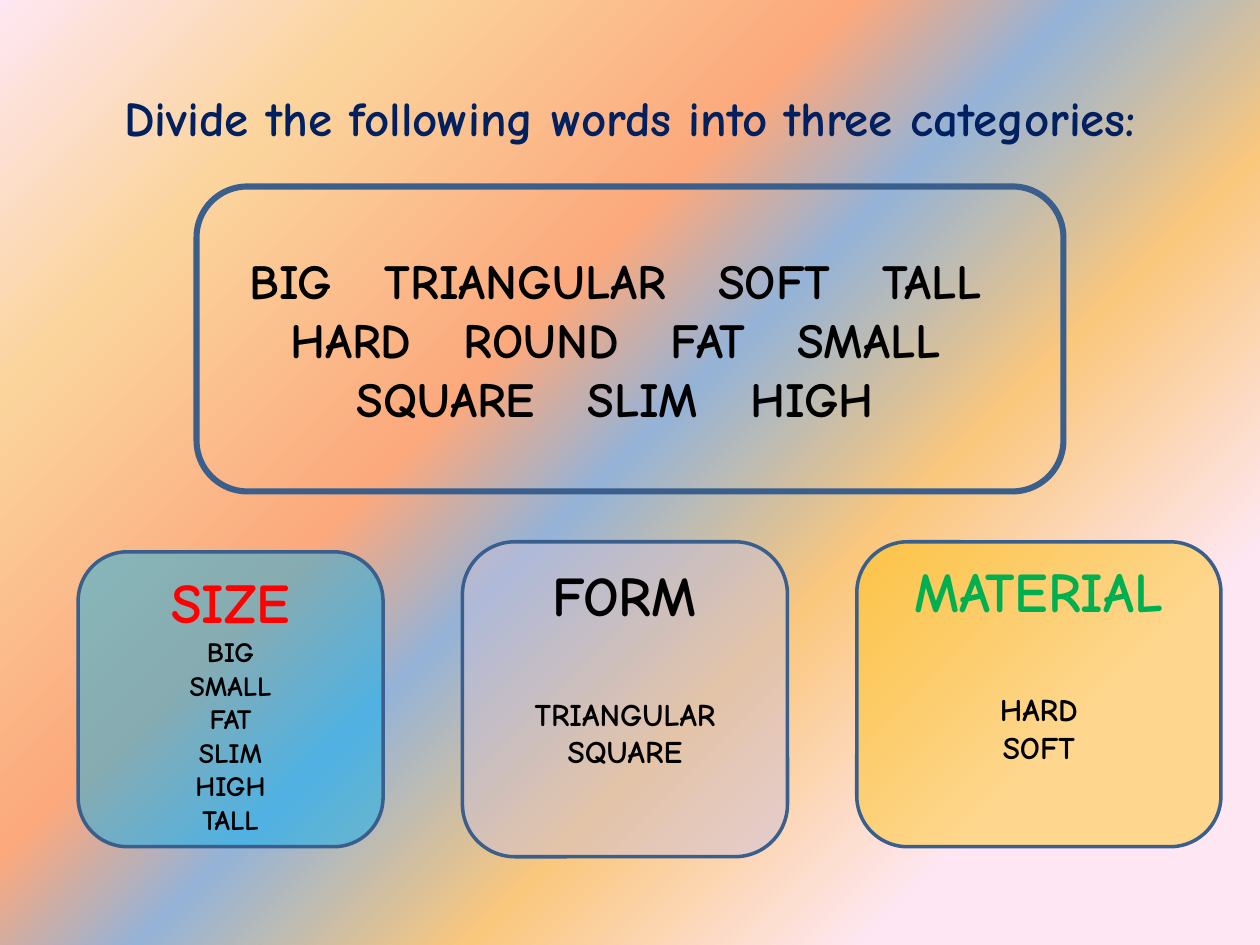
from lxml import etree
from pptx import Presentation
from pptx import util as u
from pptx.dml.color import RGBColor
from pptx.enum import shapes, text
from pptx.oxml.ns import qn

FONT = "Comic Neue"
NAVY = RGBColor(0x00, 0x20, 0x60)
BLACK = RGBColor(0x00, 0x00, 0x00)
RED = RGBColor(0xFF, 0x00, 0x00)
GREEN = RGBColor(0x00, 0xB0, 0x50)
OUTLINE = RGBColor(0x3A, 0x5F, 0x8C)
SKY = RGBColor(0x00, 0xB0, 0xF0)
LILAC = RGBColor(0xCC, 0xC1, 0xDA)
AMBER = RGBColor(0xFF, 0xC0, 0x00)
PINK = RGBColor(0xFE, 0xE7, 0xF2)
ORANGE = RGBColor(0xFA, 0xC7, 0x7D)
BLUE = RGBColor(0x95, 0xB3, 0xD7)
SALMON = RGBColor(0xFB, 0xA9, 0x7D)
CREAM = RGBColor(0xFB, 0xD4, 0x9C)

STOPS = [(18, PINK, 100), (36, ORANGE, 100), (51, BLUE, 60),
         (61, SALMON, 100), (82, CREAM, 100), (100, PINK, 100)]
ROWS = ["BIG TRIANGULAR SOFT TALL", "HARD ROUND FAT SMALL", "SQUARE SLIM HIGH"]
CARDS = [
    dict(box=(0.62, 4.38, 2.42, 2.34), fill=SKY, alpha=46, inset=0.01,
         heading="SIZE", color=RED, size=16, gap=0,
         words=["BIG", "SMALL", "FAT", "SLIM", "HIGH", "TALL"]),
    dict(box=(3.67, 4.3, 2.58, 2.5), fill=LILAC, alpha=48, inset=0.03,
         heading="FORM", color=BLACK, size=18, gap=38,
         words=["TRIANGULAR", "SQUARE"]),
    dict(box=(6.8, 4.3, 2.89, 2.42), fill=AMBER, alpha=41, inset=0,
         heading="MATERIAL", color=GREEN, size=18, gap=38,
         words=["HARD", "SOFT"]),
]


def add_alpha(clr, percent):
    """Set the opacity of a colour element."""
    etree.SubElement(clr, qn("a:alpha")).set("val", str(percent * 1000))


def add_run(p, words, size, color):
    """Append a bold run to a centred paragraph."""
    p.alignment = text.PP_ALIGN.CENTER
    r = p.add_run()
    r.text = words
    r.font.color.rgb = color
    for name, value in dict(name=FONT, size=u.Pt(size), bold=True).items():
        setattr(r.font, name, value)
    return r


def paint_background(s):
    """Fill the slide with the gradient that grows from its lower right corner."""
    s.background.fill.solid()
    solid = s.element.find(".//" + qn("p:bgPr"))[0]
    grad = etree.Element(qn("a:gradFill"), rotWithShape="1")
    stops = etree.SubElement(grad, qn("a:gsLst"))
    for pos, color, alpha in STOPS:
        gs = etree.SubElement(stops, qn("a:gs"), pos=str(pos * 1000))
        clr = etree.SubElement(gs, qn("a:srgbClr"), val=str(color))
        if alpha < 100:
            add_alpha(clr, alpha)
    path = etree.SubElement(grad, qn("a:path"), path="circle")
    etree.SubElement(path, qn("a:fillToRect"), l="100000", t="100000")
    solid.getparent().replace(solid, grad)


def add_title(s, box):
    """Place and format the title placeholder."""
    sp = s.shapes.title
    sp.left, sp.top, sp.width, sp.height = map(u.Inches, box)
    tf = sp.text_frame
    tf.vertical_anchor = text.MSO_ANCHOR.MIDDLE
    add_run(tf.paragraphs[0], "Divide the following words into three categories:", 28, NAVY)


def add_panel(s, kind, box, weight, anchor):
    """Add an outlined panel with a wrapping text frame."""
    sp = s.shapes.add_shape(kind, *map(u.Inches, box))
    sp.shadow.inherit = False
    sp.line.color.rgb = OUTLINE
    sp.line.width = u.Pt(weight)
    sp.text_frame.word_wrap = True
    sp.text_frame.vertical_anchor = anchor
    return sp


def add_word_bank(s, box):
    """Show the words to sort in rows, with wide spaces between them."""
    sp = add_panel(s, shapes.MSO_SHAPE.FLOWCHART_ALTERNATE_PROCESS, box, 3.5,
                   text.MSO_ANCHOR.MIDDLE)
    sp.fill.background()
    tf = sp.text_frame
    tf.margin_right = u.Inches(0.33)
    for i, row in enumerate(ROWS):
        p = tf.add_paragraph() if i else tf.paragraphs[0]
        for j, word in enumerate(row.split()):
            if j:
                space = add_run(p, " ", 28, BLACK)
                space.font._element.set("spc", "2000")
            add_run(p, word, 28, BLACK)


def add_card(s, box, fill, alpha, inset, heading, color, size, gap, words):
    """Add a category card with its heading and sorted words."""
    sp = add_panel(s, shapes.MSO_SHAPE.ROUNDED_RECTANGLE, box, 2, text.MSO_ANCHOR.TOP)
    sp.fill.solid()
    sp.fill.fore_color.rgb = fill
    add_alpha(sp.element.spPr.find(qn("a:solidFill"))[0], alpha)
    tf = sp.text_frame
    tf.margin_top = u.Inches(inset)
    add_run(tf.paragraphs[0], heading, 32, color)
    tf.paragraphs[0].space_after = u.Pt(gap)
    for word in words:
        add_run(tf.add_paragraph(), word, size, BLACK)


def main():
    """Build and save the slide."""
    prs = Presentation()
    prs.slide_width, prs.slide_height = u.Inches(10), u.Inches(7.5)
    s = prs.slides.add_slide(prs.slide_layouts[5])
    paint_background(s)
    add_title(s, (0.5, 0.3, 9, 1.25))
    add_word_bank(s, (1.56, 1.48, 6.88, 2.42))
    for card in CARDS:
        add_card(s, **card)
    prs.save("out.pptx")


if __name__ == "__main__":
    main()
